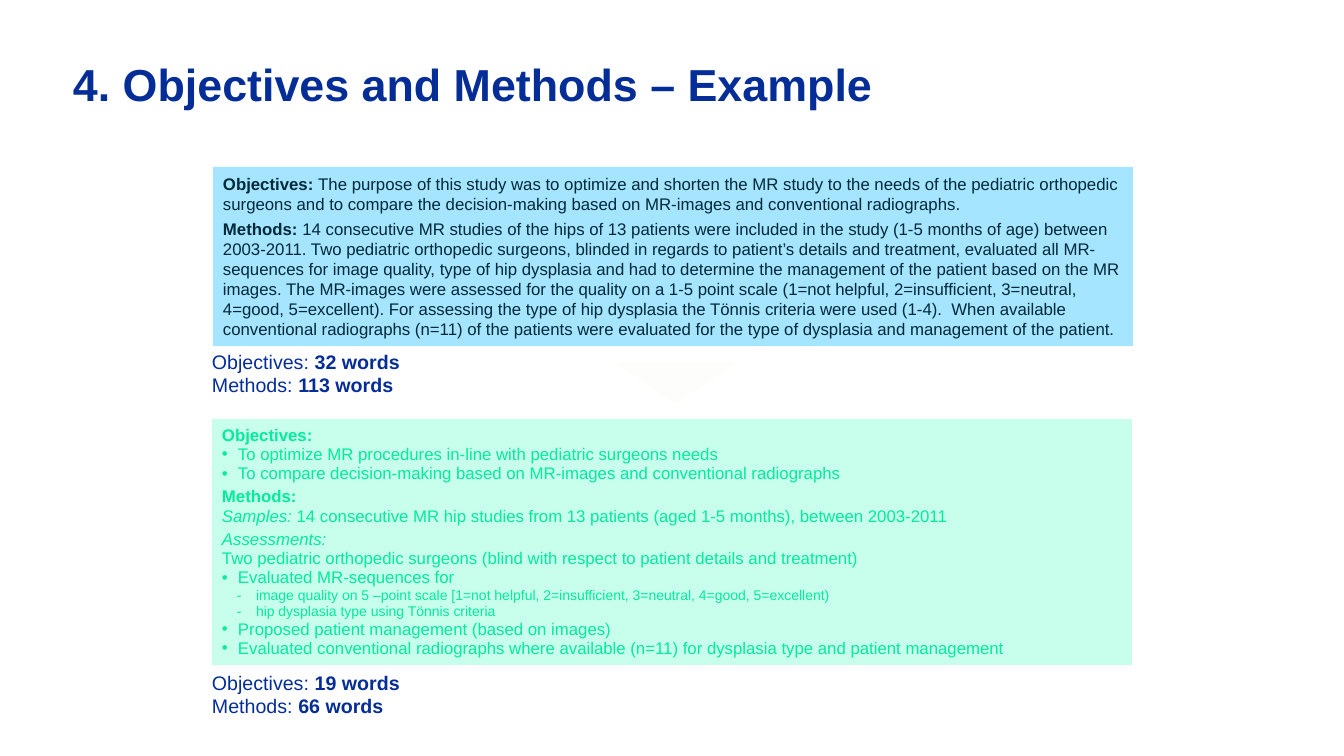
from dataclasses import dataclass

from lxml import etree
from pptx import Presentation
from pptx.dml.color import RGBColor
from pptx.enum.shapes import MSO_SHAPE
from pptx.enum.text import MSO_ANCHOR, MSO_AUTO_SIZE, PP_ALIGN
from pptx.oxml.ns import qn
from pptx.util import Emu, Pt

RECTANGLE = MSO_SHAPE.RECTANGLE
PENTAGON = MSO_SHAPE.PENTAGON
TOP = MSO_ANCHOR.TOP
MIDDLE = MSO_ANCHOR.MIDDLE
LEFT = PP_ALIGN.LEFT
NO_AUTOFIT = MSO_AUTO_SIZE.NONE

EMU_PER_PX = 914400 / 100.8
FONT = "Arial"
COLORS = {
    "navy": "042D98",
    "ink": "00293A",
    "sky": "A5E5FF",
    "green": "00EB9B",
    "mint": "C8FFEC",
    "arrow": "FDFDFC",
}


@dataclass(frozen=True)
class Box:
    left: int
    top: int
    width: int
    height: int


@dataclass(frozen=True)
class Span:
    text: str
    bold: bool = False
    italic: bool = False


@dataclass(frozen=True)
class Bullet:
    char: str
    margin: int
    hanging: int
    level: int = 0


@dataclass(frozen=True)
class Line:
    spans: tuple[Span, ...]
    after: int = 0
    bullet: Bullet | None = None
    size: int = 12


@dataclass(frozen=True)
class WordCount:
    box: Box
    objectives: int
    methods: int


DOT = Bullet("•", 16, 16)
DASH = Bullet("-", 34, 19, level=1)

TITLE = "4. Objectives and Methods – Example"
TITLE_BOX = Box(73, 57, 1198, 107)
LONG_BOX = Box(213, 167, 920, 179)
SHORT_BOX = Box(212, 419, 920, 246)
ARROW_BOX = Box(655, 324, 41, 119)

WORD_COUNTS = [
    WordCount(Box(212, 352, 230, 55), 32, 113),
    WordCount(Box(212, 673, 285, 55), 19, 66),
]

LONG_VERSION = [
    Line((
        Span("Objectives: ", bold=True),
        Span("The purpose of this study was to optimize and shorten the MR study to the needs "
             "of the pediatric orthopedic surgeons and to compare the decision-making based on "
             "MR-images and conventional radiographs."),
    ), after=3),
    Line((
        Span("Methods: ", bold=True),
        Span("14 consecutive MR studies of the hips of 13 patients were included in the study "
             "(1-5 months of age) between 2003-2011. Two pediatric orthopedic surgeons, blinded "
             "in regards to patient’s details and treatment, evaluated all MR-sequences for image "
             "quality, type of hip dysplasia and had to determine the management of the patient "
             "based on the MR images. The MR-images were assessed for the quality on a 1-5 point "
             "scale (1=not helpful, 2=insufficient, 3=neutral, 4=good, 5=excellent). For assessing "
             "the type of hip dysplasia the Tönnis criteria were used (1-4).  When available "
             "conventional radiographs (n=11) of the patients were evaluated for the type of "
             "dysplasia and management of the patient."),
    ), after=3),
]

SHORT_VERSION = [
    Line((Span("Objectives:", bold=True),)),
    Line((Span("To optimize MR procedures in-line with pediatric surgeons needs"),), bullet=DOT),
    Line((Span("To compare decision-making based on MR-images and conventional radiographs"),),
         after=3, bullet=DOT),
    Line((Span("Methods:", bold=True),)),
    Line((
        Span("Samples: ", italic=True),
        Span("14 consecutive MR hip studies from 13 patients (aged 1-5 months), between 2003-2011"),
    ), after=3),
    Line((Span("Assessments:", italic=True),)),
    Line((Span("Two pediatric orthopedic surgeons (blind with respect to patient details and "
               "treatment)"),)),
    Line((Span("Evaluated MR-sequences for"),), bullet=DOT),
    Line((Span("image quality on 5 –point scale [1=not helpful, 2=insufficient, 3=neutral, 4=good, "
               "5=excellent)"),), bullet=DASH, size=10),
    Line((Span("hip dysplasia type using Tönnis criteria"),), bullet=DASH, size=10),
    Line((Span("Proposed patient management (based on images)"),), bullet=DOT),
    Line((Span("Evaluated conventional radiographs where available (n=11) for dysplasia type and "
               "patient management"),), bullet=DOT),
]


def px(length: int) -> Emu:
    return Emu(round(length * EMU_PER_PX))


def edges(box: Box) -> tuple[Emu, ...]:
    return px(box.left), px(box.top), px(box.width), px(box.height)


def place(shape, box: Box) -> None:
    shape.left, shape.top, shape.width, shape.height = edges(box)


def paint(shape, color: str) -> None:
    shape.fill.solid()
    shape.fill.fore_color.rgb = RGBColor.from_string(COLORS[color])
    shape.line.fill.background()


def prepare_frame(frame, anchor: MSO_ANCHOR, inset: bool) -> None:
    frame.word_wrap = True
    frame.auto_size = NO_AUTOFIT
    frame.vertical_anchor = anchor
    frame.margin_left = frame.margin_right = px(10 if inset else 0)
    frame.margin_top = frame.margin_bottom = px(5 if inset else 0)


def style_run(run, size: int, color: str, bold: bool = False, italic: bool = False) -> None:
    run.font.name = FONT
    run.font.size = Pt(size)
    run.font.bold = bold
    run.font.italic = italic
    run.font.color.rgb = RGBColor.from_string(COLORS[color])


def set_bullet(paragraph, bullet: Bullet | None) -> None:
    properties = paragraph._p.get_or_add_pPr()
    properties.set("marL", str(px(bullet.margin) if bullet else 0))
    properties.set("indent", str(-px(bullet.hanging) if bullet else 0))
    if bullet:
        paragraph.level = bullet.level
        etree.SubElement(properties, qn("a:buChar")).set("char", bullet.char)
    else:
        etree.SubElement(properties, qn("a:buNone"))


def write_lines(frame, lines: list[Line], color: str, spacing: float) -> None:
    frame.text = "\n".join("" for _ in lines)
    for paragraph, line in zip(frame.paragraphs, lines):
        set_bullet(paragraph, line.bullet)
        paragraph.alignment = LEFT
        paragraph.line_spacing = spacing
        paragraph.space_before = Pt(0)
        paragraph.space_after = Pt(line.after)
        for span in line.spans:
            run = paragraph.add_run()
            run.text = span.text
            style_run(run, line.size, color, span.bold, span.italic)


def add_word_count(slide, count: WordCount) -> None:
    frame = slide.shapes.add_textbox(*edges(count.box)).text_frame
    prepare_frame(frame, TOP, inset=False)
    paragraph = frame.paragraphs[0]
    paragraph.line_spacing = 0.95
    for section, words in (("Objectives", count.objectives), ("Methods", count.methods)):
        if paragraph.runs:
            paragraph.add_line_break()
        for text, bold in ((f"{section}: ", False), (f"{words} words", True)):
            run = paragraph.add_run()
            run.text = text
            style_run(run, 14, "navy", bold)


def main() -> None:
    deck = Presentation()
    deck.slide_width, deck.slide_height = px(1344), px(756)
    slide = deck.slides.add_slide(deck.slide_layouts[1])

    title = slide.shapes.title
    place(title, TITLE_BOX)
    prepare_frame(title.text_frame, TOP, inset=False)
    title.text_frame.text = TITLE
    title.text_frame.paragraphs[0].alignment = LEFT
    style_run(title.text_frame.paragraphs[0].runs[0], 32, "navy", bold=True)

    short_version = slide.placeholders[1]
    place(short_version, SHORT_BOX)
    paint(short_version, "mint")
    prepare_frame(short_version.text_frame, MIDDLE, inset=True)
    write_lines(short_version.text_frame, SHORT_VERSION, "green", 0.95)

    long_version = slide.shapes.add_shape(RECTANGLE, *edges(LONG_BOX))
    long_version.shadow.inherit = False
    paint(long_version, "sky")
    prepare_frame(long_version.text_frame, MIDDLE, inset=True)
    write_lines(long_version.text_frame, LONG_VERSION, "ink", 1.0)

    for count in WORD_COUNTS:
        add_word_count(slide, count)

    arrow = slide.shapes.add_shape(PENTAGON, *edges(ARROW_BOX))
    arrow.shadow.inherit = False
    arrow.adjustments[0] = 1.0
    arrow.rotation = 90
    paint(arrow, "arrow")

    deck.save("out.pptx")


if __name__ == "__main__":
    main()
